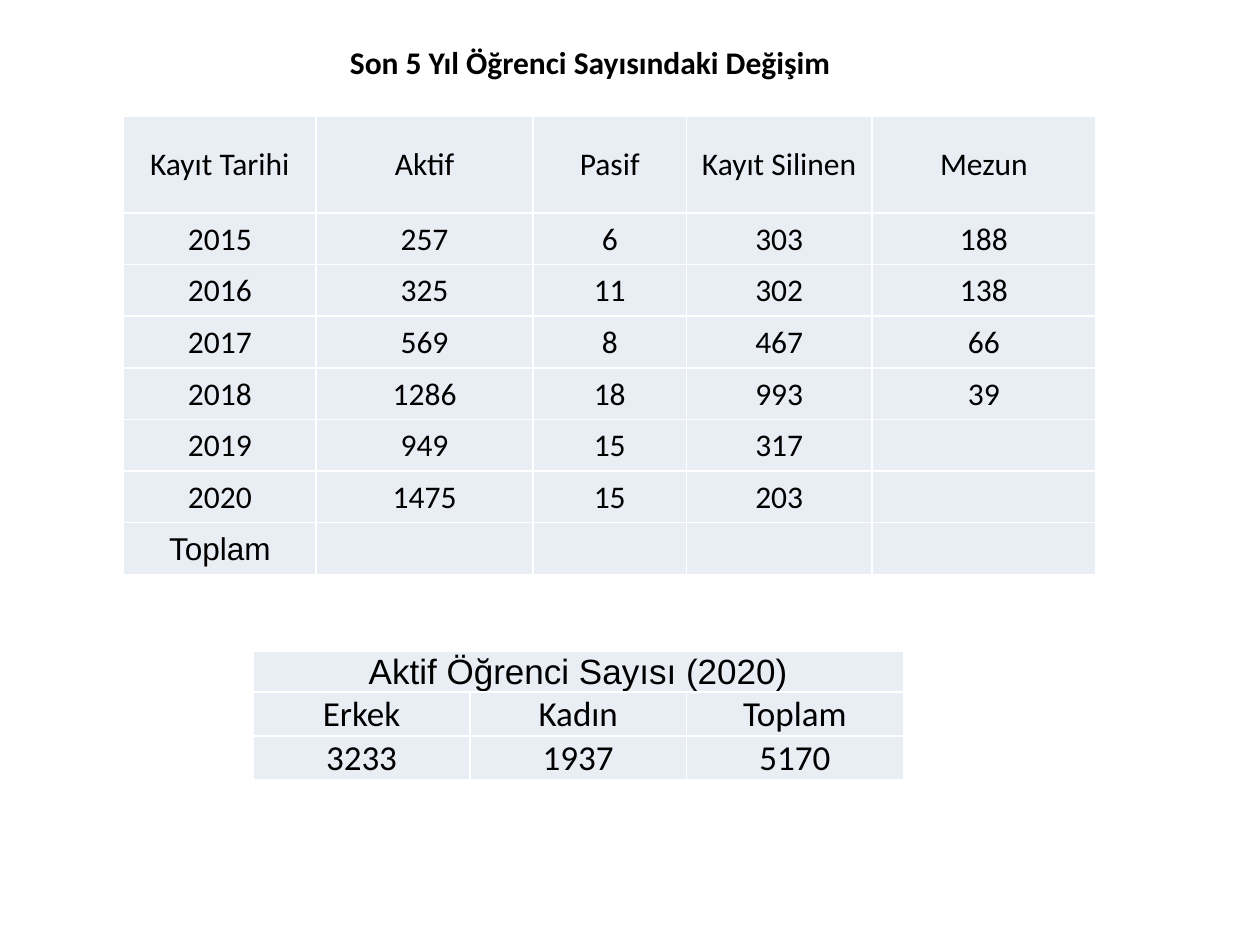
import pptx
import pptx.dml.color
import pptx.enum.text
import pptx.util
from lxml import etree

prs = pptx.Presentation()
prs.slide_width = pptx.util.Inches(10)
prs.slide_height = pptx.util.Inches(7.5)
U = prs.slide_width / 100  # grid of 100 columns by 75 rows
CENTER = pptx.enum.text.PP_ALIGN.CENTER
A = "http://schemas.openxmlformats.org/drawingml/2006/main"


def rgb(value):
    return pptx.dml.color.RGBColor.from_string(value)


def add_grid(s, left, top, height, widths, heights, rows, size, arial_text):
    """Add a table in grid units; the cell reading arial_text is set in Arial."""
    frame = s.shapes.add_table(len(rows), len(widths), int(left * U), int(top * U),
                               int(sum(widths) * U), int(height * U))
    table = frame.table
    for column, width in zip(table.columns, widths):
        column.width = int(width * U)
    for row, row_height in zip(table.rows, heights):
        row.height = int(row_height * U)
    frame.height = int(height * U)
    for row, texts in zip(table.rows, rows):
        for cell, text in zip(row.cells, texts):
            cell.margin_left = cell.margin_top = cell.margin_right = int(0.1 * U)
            cell.margin_bottom = 0
            cell.vertical_anchor = pptx.enum.text.MSO_ANCHOR.MIDDLE
            tcPr = cell._tc.get_or_add_tcPr()
            for side in ("lnL", "lnR", "lnT", "lnB"):
                ln = etree.SubElement(tcPr, f"{{{A}}}{side}", w=str(pptx.util.Pt(1)))
                fill = etree.SubElement(ln, f"{{{A}}}solidFill")
                etree.SubElement(fill, f"{{{A}}}srgbClr", val="FFFFFF")
            cell.fill.solid()
            cell.fill.fore_color.rgb = rgb("E9EDF4")
            p = cell.text_frame.paragraphs[0]
            p.text = text
            p.alignment = CENTER
            p.font.size = pptx.util.Pt(size)
            for r in p.runs:
                r.font.size = pptx.util.Pt(size)
                r.font.name = "Arial" if text == arial_text else "Calibri"
                r.font.bold = False
                r.font.color.rgb = rgb("000000")
    return table


s = prs.slides.add_slide(prs.slide_layouts[6])

gender_title = "Aktif Öğrenci Sayısı (2020)"
gender = add_grid(s, 20.1, 51.7, 10.3, [17.2] * 3, [1.8] * 3, [
    (gender_title, "", ""),
    ("Erkek", "Kadın", "Toplam"),
    ("3233", "1937", "5170"),
], 20, gender_title)
gender.cell(0, 0).merge(gender.cell(0, 2))

add_grid(s, 9.8, 9.2, 36.4, [15.3, 17.2, 12.2, 14.7, 17.8], [7.7] + [4.1] * 7, [
    ("Kayıt Tarihi", "Aktif", "Pasif", "Kayıt Silinen", "Mezun"),
    ("2015", "257", "6", "303", "188"),
    ("2016", "325", "11", "302", "138"),
    ("2017", "569", "8", "467", "66"),
    ("2018", "1286", "18", "993", "39"),
    ("2019", "949", "15", "317", ""),
    ("2020", "1475", "15", "203", ""),
    ("Toplam", "", "", "", ""),
], 18, "Toplam")

title = s.shapes.add_textbox(int(19.3 * U), int(2.9 * U), int(55.1 * U), int(4 * U))
tf = title.text_frame
tf.word_wrap = True
tf.auto_size = pptx.enum.text.MSO_AUTO_SIZE.SHAPE_TO_FIT_TEXT
p = tf.paragraphs[0]
p.text = "Son 5 Yıl Öğrenci Sayısındaki Değişim"
p.alignment = CENTER
r = p.runs[0]
r.font.size = pptx.util.Pt(18)
r.font.name = "Calibri"
r.font.bold = True
r.font.color.rgb = rgb("000000")

prs.save("out.pptx")
